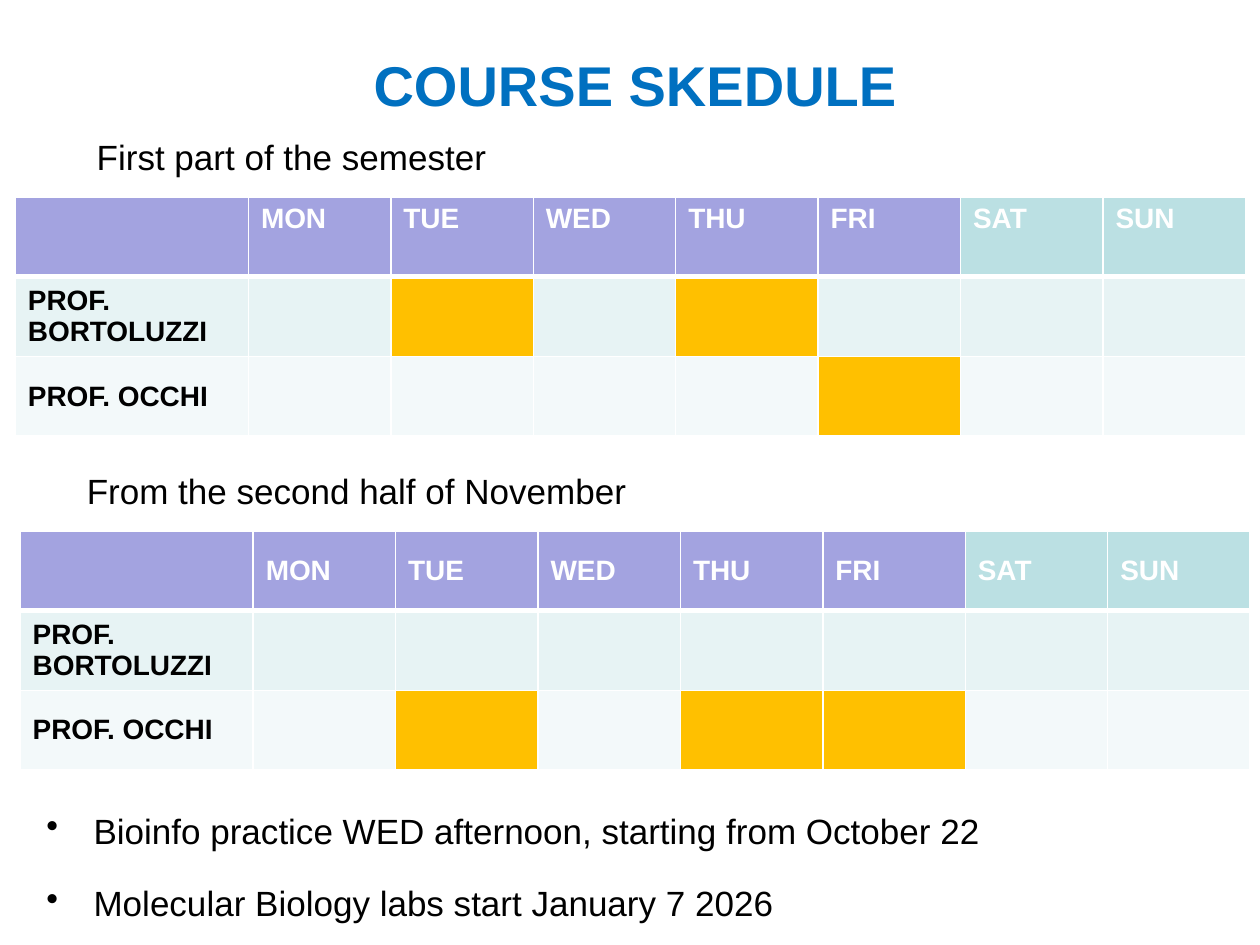
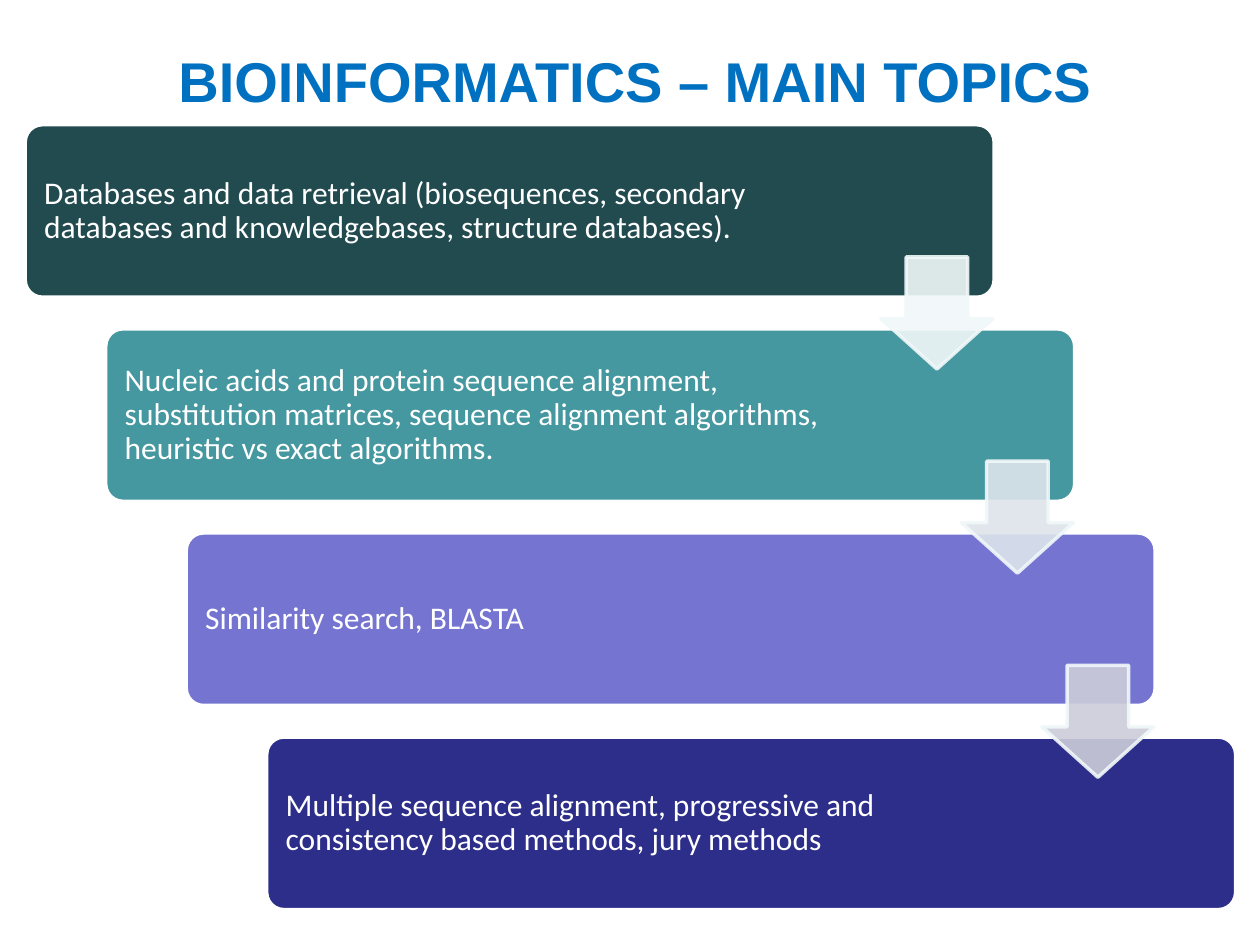
from dataclasses import dataclass

from lxml.etree import SubElement
from pptx import Presentation
from pptx.dml.color import RGBColor
from pptx.enum.shapes import MSO_SHAPE
from pptx.enum.text import MSO_ANCHOR, MSO_AUTO_SIZE, PP_ALIGN
from pptx.oxml.ns import qn
from pptx.util import Pt

# Shared style
TITLE_ONLY = 5
WHITE, BLACK, TITLE_BLUE = "FFFFFF", "000000", "0070C0"
WEEKDAY, WEEKEND, LESSON = "A3A3E0", "BBE0E3", "FFC000"
BODY_ROWS = ("E7F3F4", "F3F9FA")
ARROW_EDGE = "F1F8F9"
TEXT_TOP_INSET = 6

# Timetable grid
DAYS = ("MON", "TUE", "WED", "THU", "FRI", "SAT", "SUN")
TEACHERS = ("PROF. BORTOLUZZI", "PROF. OCCHI")
NAME_WIDTH, DAY_WIDTH, ROW_HEIGHT = 133.2, 81.4, 45.6

# Topic staircase
STEP_LEFT, STEP_TOP, STEP_RIGHT, STEP_DOWN = 14.4, 71.3, 46, 116.64
STEP_WIDTH, STEP_HEIGHT = 553.7, 98.6
ARROW_DX, ARROW_DY, ARROW_SIZE = 489, 75.6, 64


@dataclass(frozen=True)
class Timetable:
    caption: str
    caption_left: float
    caption_top: float
    left: float
    top: float
    header_anchor: MSO_ANCHOR
    lessons: tuple[tuple[str, ...], tuple[str, ...]]


@dataclass(frozen=True)
class Topic:
    text: str
    fill: str
    arrow_fill: str | None = None


TIMETABLES = (
    Timetable("First part of the semester", 48.2, 71.3, 8.8, 112.5,
              MSO_ANCHOR.TOP, (("TUE", "THU"), ("FRI",))),
    Timetable("From the second half of November", 42.5, 262, 11.5, 303.3,
              MSO_ANCHOR.MIDDLE, ((), ("TUE", "THU", "FRI"))),
)
NOTICES = (
    "Bioinfo practice WED afternoon, starting from October 22",
    "Molecular Biology labs start January 7 2026",
)
TOPICS = (
    Topic("Databases and data retrieval (biosequences, secondary databases "
          "and knowledgebases, structure databases).", "224B50", "F1F8F9"),
    Topic("Nucleic acids and protein sequence alignment, substitution matrices, "
          "sequence alignment algorithms, heuristic vs exact algorithms.",
          "4597A0", "DDE4EB"),
    Topic("Similarity search, BLASTA", "7575D1", "CDCDDA"),
    Topic("Multiple sequence alignment, progressive and consistency based "
          "methods, jury methods", "2D2D8A"),
)


def color(hex_code: str) -> RGBColor:
    return RGBColor.from_string(hex_code)


def style(para, size: float, hex_code: str, bold: bool = False,
          name: str = "Arial") -> None:
    font = para.font
    font.size, font.bold, font.name = Pt(size), bold, name
    font.color.rgb = color(hex_code)


def add_titled_page(deck, text: str, top: float):
    page = deck.slides.add_slide(deck.slide_layouts[TITLE_ONLY])
    title = page.shapes.title
    title.left, title.top, title.width, title.height = Pt(3), Pt(top), Pt(720), Pt(58.3)
    frame = title.text_frame
    frame.text = text
    frame.word_wrap, frame.auto_size = True, MSO_AUTO_SIZE.NONE
    frame.vertical_anchor, frame.margin_top = MSO_ANCHOR.TOP, Pt(8)
    para = frame.paragraphs[0]
    para.alignment = PP_ALIGN.CENTER
    style(para, 32, TITLE_BLUE, bold=True)
    return page


def add_text(page, lines: tuple[str, ...], left: float, top: float,
             width: float, height: float):
    box = page.shapes.add_textbox(Pt(left), Pt(top), Pt(width), Pt(height))
    frame = box.text_frame
    frame.word_wrap, frame.margin_top = True, Pt(TEXT_TOP_INSET)
    frame.text = "\n".join(lines)
    for para in frame.paragraphs:
        style(para, 20, BLACK)
    return frame


def add_bullet(para, indent: float) -> None:
    props = para._p.get_or_add_pPr()
    props.set("marL", str(Pt(indent)))
    props.set("indent", str(-Pt(indent)))
    bullet = SubElement(props, qn("a:buChar"), char="•")
    # The bullet has to precede the default run properties
    props.find(qn("a:defRPr")).addprevious(bullet)


def set_borders(cell, top: float, bottom: float) -> None:
    props = cell._tc.get_or_add_tcPr()
    widths = {"lnL": 1, "lnR": 1, "lnT": top, "lnB": bottom}
    for position, (side, width) in enumerate(widths.items()):
        line = SubElement(props, qn(f"a:{side}"), w=str(Pt(width)))
        fill = SubElement(line, qn("a:solidFill"))
        SubElement(fill, qn("a:srgbClr"), val=WHITE)
        props.insert(position, line)


def fill_cell(cell, text: str, fill: str, ink: str, anchor: MSO_ANCHOR) -> None:
    cell.fill.solid()
    cell.fill.fore_color.rgb = color(fill)
    cell.vertical_anchor = anchor
    cell.text = text
    style(cell.text_frame.paragraphs[0], 16, ink, bold=True)


def add_timetable(page, plan: Timetable) -> None:
    add_text(page, (plan.caption,), plan.caption_left, plan.caption_top, 414, 31.5)
    rows, columns = len(TEACHERS) + 1, len(DAYS) + 1
    table = page.shapes.add_table(
        rows, columns, Pt(plan.left), Pt(plan.top),
        Pt(NAME_WIDTH + DAY_WIDTH * len(DAYS)), Pt(ROW_HEIGHT * rows)).table
    table.horz_banding = False
    for index, column in enumerate(table.columns):
        column.width = Pt(DAY_WIDTH if index else NAME_WIDTH)
    for row in table.rows:
        row.height = Pt(ROW_HEIGHT)

    # Header row
    for index, day in enumerate(("",) + DAYS):
        fill = WEEKEND if day in ("SAT", "SUN") else WEEKDAY
        cell = table.cell(0, index)
        fill_cell(cell, day, fill, WHITE, plan.header_anchor)
        set_borders(cell, 1, 3)

    # One row for each teacher
    for number, (teacher, taught, shade) in enumerate(
            zip(TEACHERS, plan.lessons, BODY_ROWS), start=1):
        for index, day in enumerate(("",) + DAYS):
            cell = table.cell(number, index)
            fill_cell(cell, "" if day else teacher,
                      LESSON if day in taught else shade, BLACK, MSO_ANCHOR.MIDDLE)
            set_borders(cell, 3 if number == 1 else 1, 1)


def add_filled_shape(page, kind: MSO_SHAPE, left: float, top: float, width: float,
                     height: float, fill: str, edge: str, adjustments: tuple[float, ...]):
    shape = page.shapes.add_shape(kind, Pt(left), Pt(top), Pt(width), Pt(height))
    shape.shadow.inherit = False
    shape.fill.solid()
    shape.fill.fore_color.rgb = color(fill)
    shape.line.color.rgb = color(edge)
    shape.line.width = Pt(2)
    for index, value in enumerate(adjustments):
        shape.adjustments[index] = value
    return shape


def add_topic(page, topic: Topic, left: float, top: float) -> None:
    box = add_filled_shape(page, MSO_SHAPE.ROUNDED_RECTANGLE, left, top,
                           STEP_WIDTH, STEP_HEIGHT, topic.fill, WHITE, (0.1,))
    frame = box.text_frame
    frame.word_wrap, frame.vertical_anchor = True, MSO_ANCHOR.MIDDLE
    frame.margin_left, frame.margin_right = Pt(8), Pt(118)
    frame.text = topic.text
    para = frame.paragraphs[0]
    para.alignment, para.line_spacing = PP_ALIGN.LEFT, 0.9
    style(para, 18, WHITE, name="Calibri")


def add_arrow(page, fill: str, left: float, top: float) -> None:
    arrow = add_filled_shape(page, MSO_SHAPE.DOWN_ARROW, left, top, ARROW_SIZE,
                             ARROW_SIZE, fill, ARROW_EDGE, (0.55, 0.45))
    for tint in arrow._element.spPr.findall(".//" + qn("a:srgbClr")):
        SubElement(tint, qn("a:alpha"), val="90000")


def build_schedule(deck) -> None:
    page = add_titled_page(deck, "COURSE SKEDULE", 20.9)
    for plan in TIMETABLES:
        add_timetable(page, plan)
    notices = add_text(page, NOTICES, 19.4, 456.5, 692, 75)
    for para in notices.paragraphs:
        add_bullet(para, 27)
    notices.paragraphs[1].space_before = Pt(17.5)


def build_topics(deck) -> None:
    page = add_titled_page(deck, "BIOINFORMATICS – MAIN TOPICS", 18.7)
    corners = [(STEP_LEFT + STEP_RIGHT * step, STEP_TOP + STEP_DOWN * step)
               for step in range(len(TOPICS))]
    for topic, (left, top) in zip(TOPICS, corners):
        add_topic(page, topic, left, top)
    # Arrows lie above all boxes
    for topic, (left, top) in zip(TOPICS, corners):
        if topic.arrow_fill:
            add_arrow(page, topic.arrow_fill, left + ARROW_DX, top + ARROW_DY)


def main() -> None:
    deck = Presentation()
    deck.slide_width, deck.slide_height = Pt(720), Pt(540)
    build_schedule(deck)
    build_topics(deck)
    deck.save("out.pptx")


if __name__ == "__main__":
    main()
